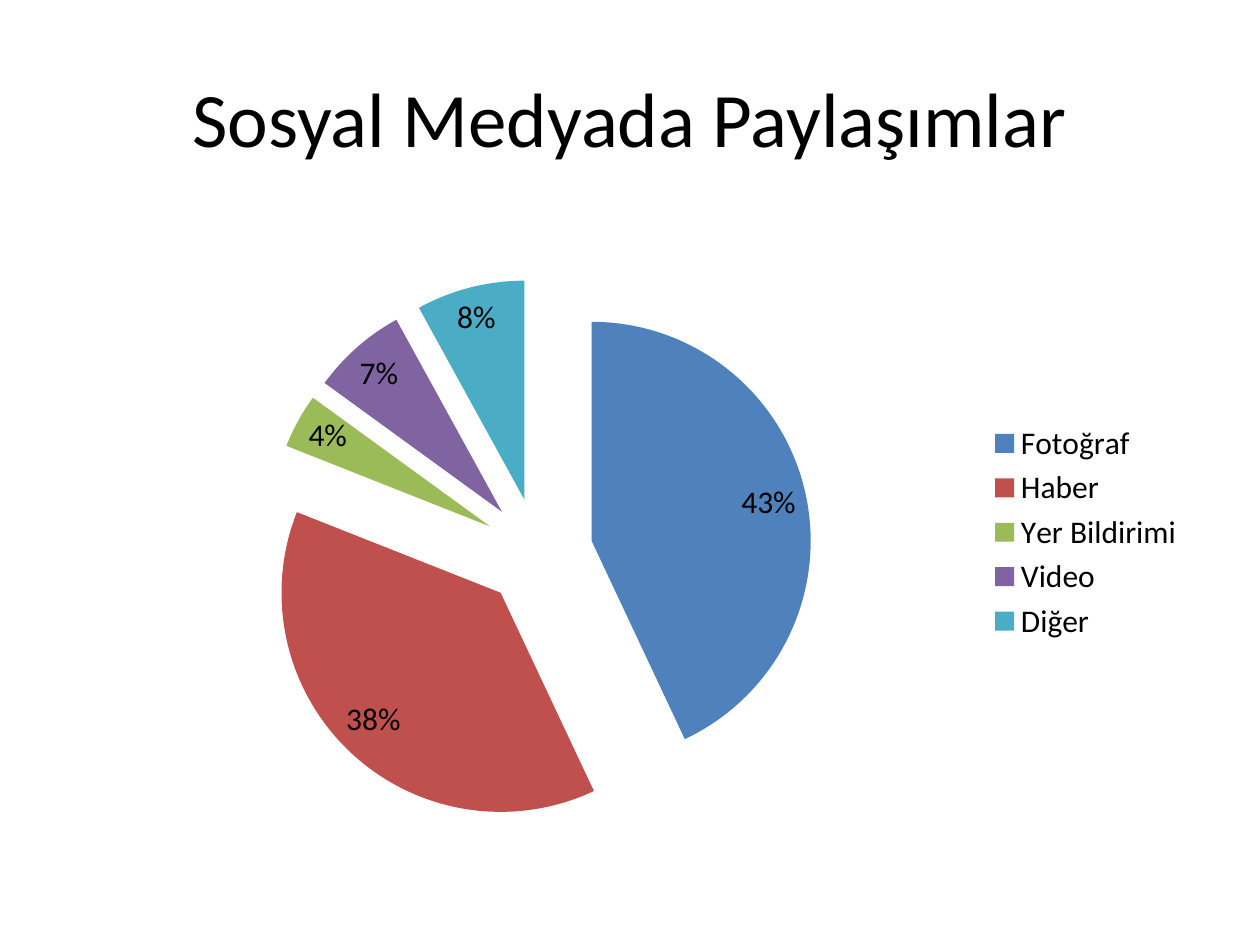
from lxml import etree
from pptx import Presentation
from pptx import util as u
from pptx.chart.data import CategoryChartData
from pptx.dml.color import RGBColor
from pptx.enum import chart as ch, text
from pptx.oxml.ns import qn

BLACK = RGBColor(0x00, 0x00, 0x00)
TITLE = "Sosyal Medyada Paylaşımlar"
SHARES = [
    ("Fotoğraf", 43, RGBColor(0x4F, 0x81, 0xBD)),
    ("Haber", 38, RGBColor(0xC0, 0x50, 0x4D)),
    ("Yer Bildirimi", 4, RGBColor(0x9B, 0xBB, 0x59)),
    ("Video", 7, RGBColor(0x80, 0x64, 0xA2)),
    ("Diğer", 8, RGBColor(0x4B, 0xAC, 0xC6)),
]
EXPLOSION = 25
TITLE_BOX = [u.Inches(v) for v in (0.5, 0.3, 9, 1.25)]
CHART_BOX = [u.Inches(v) for v in (0.5, 1.75, 9, 4.95)]


def set_all(obj, values):
    for name, value in values.items():
        setattr(obj, name, value)


def set_font(font, size):
    set_all(font, {"name": "Calibri", "size": u.Pt(size)})
    font.color.rgb = BLACK


def add_title(s):
    sp = s.shapes.title
    set_all(sp, dict(zip(("left", "top", "width", "height"), TITLE_BOX)))
    tf = sp.text_frame
    tf.text = TITLE
    tf.vertical_anchor = text.MSO_ANCHOR.MIDDLE
    p = tf.paragraphs[0]
    p.alignment = text.PP_ALIGN.CENTER
    set_font(p.runs[0].font, 44)


def add_pie(s):
    names, values, colors = zip(*SHARES)
    data = CategoryChartData()
    data.categories = names
    data.add_series("Series 1", values)
    chart = s.shapes.add_chart(ch.XL_CHART_TYPE.PIE, *CHART_BOX, data).chart
    set_all(chart, {"has_title": False, "has_legend": True})
    set_font(chart.font, 18)
    set_all(chart.legend, {"position": ch.XL_LEGEND_POSITION.RIGHT,
                           "include_in_layout": False})
    plot = chart.plots[0]
    plot.vary_by_categories = True
    series = plot.series[0]
    explosion = etree.Element(qn("c:explosion"), val=str(EXPLOSION))
    series._element.find(qn("c:cat")).addprevious(explosion)
    for i, color in enumerate(colors):
        fill = series.points[i].format.fill
        fill.solid()
        fill.fore_color.rgb = color
    set_all(series.data_labels, {"show_percentage": True, "show_value": False,
                                 "position": ch.XL_LABEL_POSITION.BEST_FIT})
    set_font(series.data_labels.font, 18)


def main():
    prs = Presentation()
    set_all(prs, {"slide_width": u.Inches(10), "slide_height": u.Inches(7.5)})
    s = prs.slides.add_slide(prs.slide_layouts[5])
    add_title(s)
    add_pie(s)
    prs.save("out.pptx")


if __name__ == "__main__":
    main()
